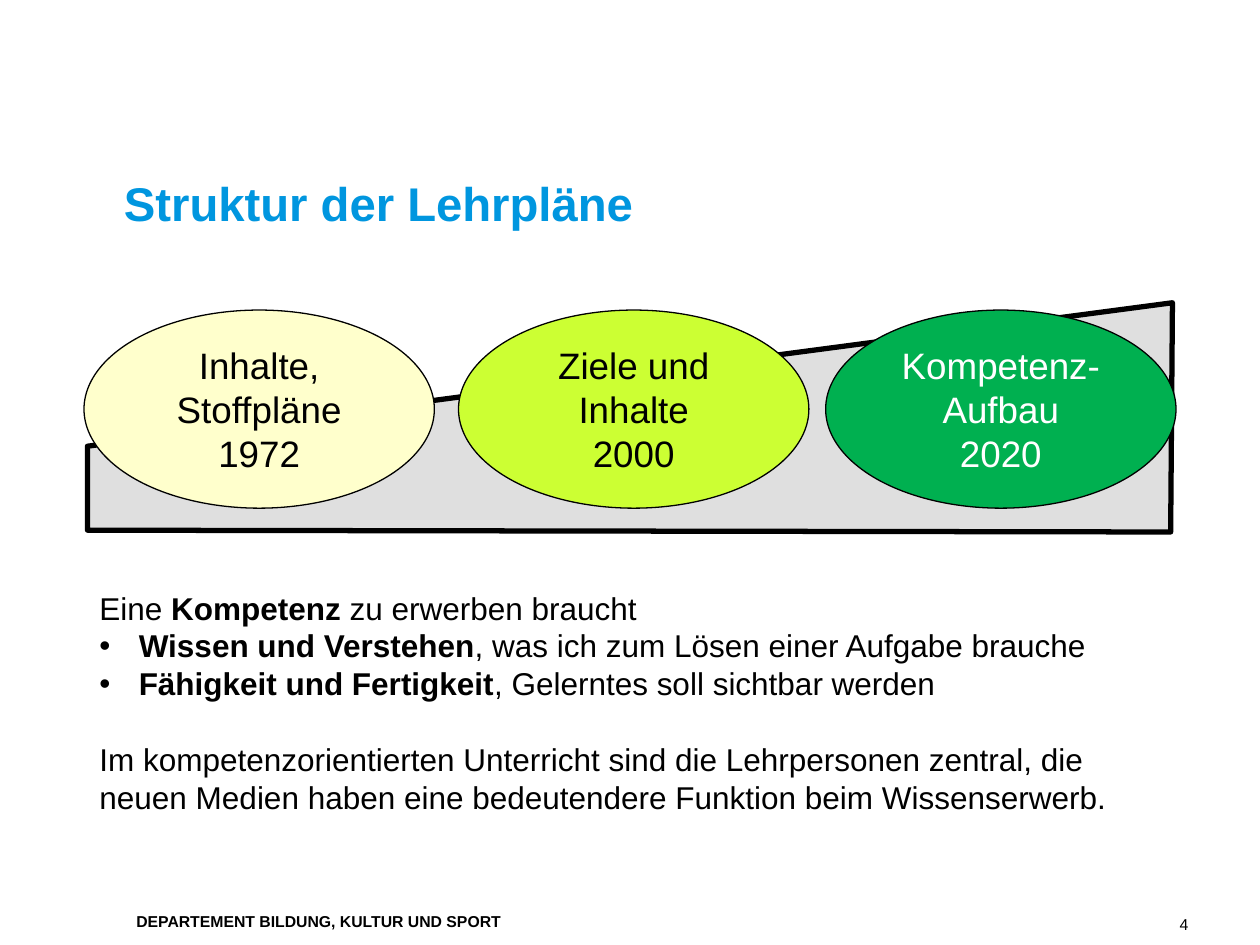
from lxml import etree
from pptx import Presentation
from pptx.dml.color import RGBColor
from pptx.enum.shapes import MSO_SHAPE
from pptx.enum.text import MSO_ANCHOR, MSO_AUTO_SIZE, PP_ALIGN
from pptx.oxml.ns import qn
from pptx.util import Pt

OVAL = MSO_SHAPE.OVAL
TOP, MIDDLE = MSO_ANCHOR.TOP, MSO_ANCHOR.MIDDLE
LEFT, CENTER, RIGHT = PP_ALIGN.LEFT, PP_ALIGN.CENTER, PP_ALIGN.RIGHT
NO_FIT = MSO_AUTO_SIZE.NONE

STAGES = [
    (471.8, "Kompetenz-Aufbau\n2020", "00B050", "FFFFFF"),
    (262, "Ziele und Inhalte\n2000", "CCFF33", "000000"),
    (48, "Inhalte, Stoffpläne\n1972", "FFFFCC", "000000"),
]
BODY = [
    (False, 0, [("Eine ", False), ("Kompetenz", True), (" zu erwerben braucht", False)]),
    (True, 0, [("Wissen und Verstehen", True),
               (", was ich zum Lösen einer Aufgabe brauche", False)]),
    (True, 0, [("Fähigkeit und Fertigkeit", True),
               (", Gelerntes soll sichtbar werden", False)]),
    (False, 21.6, [("Im kompetenzorientierten Unterricht sind die Lehrpersonen zentral, "
                    "die neuen Medien haben eine bedeutendere Funktion beim "
                    "Wissenserwerb.", False)]),
]


def color(code):
    return RGBColor.from_string(code)


def style(font, size, code, bold=False):
    font.name = "Arial"
    font.size = Pt(size)
    font.bold = bold
    font.color.rgb = color(code)


def place(shape, box):
    shape.left, shape.top, shape.width, shape.height = map(Pt, box)


def paint(shape, fill, width):
    shape.shadow.inherit = False
    shape.fill.solid()
    shape.fill.fore_color.rgb = color(fill)
    shape.line.color.rgb = color("000000")
    shape.line.width = Pt(width)


def add_title(slide, box):
    title = slide.shapes.title
    place(title, box)
    frame = title.text_frame
    frame.auto_size = NO_FIT
    frame.vertical_anchor = TOP
    frame.margin_left = frame.margin_top = frame.margin_right = frame.margin_bottom = 0
    frame.text = "Struktur der Lehrpläne"
    para = frame.paragraphs[0]
    para.alignment = LEFT
    style(para.runs[0].font, 27, "0096DF", True)


def add_wedge(slide, box):
    x, y, w, h = box
    pen = slide.shapes.build_freeform(x, y + 82, scale=Pt(1))
    pen.add_line_segments([(x + w, y), (x + w - 0.8, y + h),
                           (x + 0.8, y + h - 0.8)], close=True)
    wedge = pen.convert_to_shape()
    paint(wedge, "A6A6A6", 3)
    tint = wedge.fill._xPr.find(qn("a:solidFill"))[0]
    etree.SubElement(tint, qn("a:alpha"), val="35000")


def add_stage(slide, box, text, fill, ink):
    oval = slide.shapes.add_shape(OVAL, *map(Pt, box))
    paint(oval, fill, 0.75)
    frame = oval.text_frame
    frame.word_wrap = True
    frame.vertical_anchor = MIDDLE
    frame.margin_left = frame.margin_right = Pt(6.5)
    frame.margin_top = frame.margin_bottom = Pt(3)
    frame.text = text
    for para in frame.paragraphs:
        para.alignment = CENTER
        style(para.runs[0].font, 21, ink)


def set_bullet(para, bullet):
    props = para._p.get_or_add_pPr()
    indent = Pt(22.5) if bullet else 0
    props.set("marL", str(indent))
    props.set("indent", str(-indent))
    if bullet:
        etree.SubElement(props, qn("a:buFont"), typeface="Arial")
        etree.SubElement(props, qn("a:buChar"), char="•")
    else:
        etree.SubElement(props, qn("a:buNone"))


def add_body(slide, box):
    body = slide.placeholders[1]
    place(body, box)
    frame = body.text_frame
    frame.auto_size = NO_FIT
    frame.vertical_anchor = TOP
    for i, (bullet, gap, parts) in enumerate(BODY):
        para = frame.add_paragraph() if i else frame.paragraphs[0]
        set_bullet(para, bullet)
        para.space_before = Pt(gap)
        for text, bold in parts:
            run = para.add_run()
            run.text = text
            style(run.font, 18, "000000", bold)


def add_label(slide, box, text, bold, align, anchor):
    frame = slide.shapes.add_textbox(*map(Pt, box)).text_frame
    frame.word_wrap = True
    frame.vertical_anchor = anchor
    frame.text = text
    para = frame.paragraphs[0]
    para.alignment = align
    style(para.runs[0].font, 9, "000000", bold)


def main():
    deck = Presentation()
    deck.slide_width, deck.slide_height = Pt(720), Pt(540)
    slide = deck.slides.add_slide(deck.slide_layouts[1])
    add_title(slide, (70.8, 99.4, 595.2, 48))
    add_wedge(slide, (49.6, 173.4, 620.6, 130.4))
    for left, text, fill, ink in STAGES:
        add_stage(slide, (left, 177.2, 200.2, 113.2), text, fill, ink)
    add_body(slide, (49.6, 332.8, 620.8, 138))
    add_label(slide, (70.8, 517.7, 459.2, 18), "DEPARTEMENT BILDUNG, KULTUR UND SPORT",
              True, LEFT, TOP)
    add_label(slide, (518.4, 516.2, 167.8, 24), "4", False, RIGHT, MIDDLE)
    deck.save("out.pptx")


if __name__ == "__main__":
    main()
